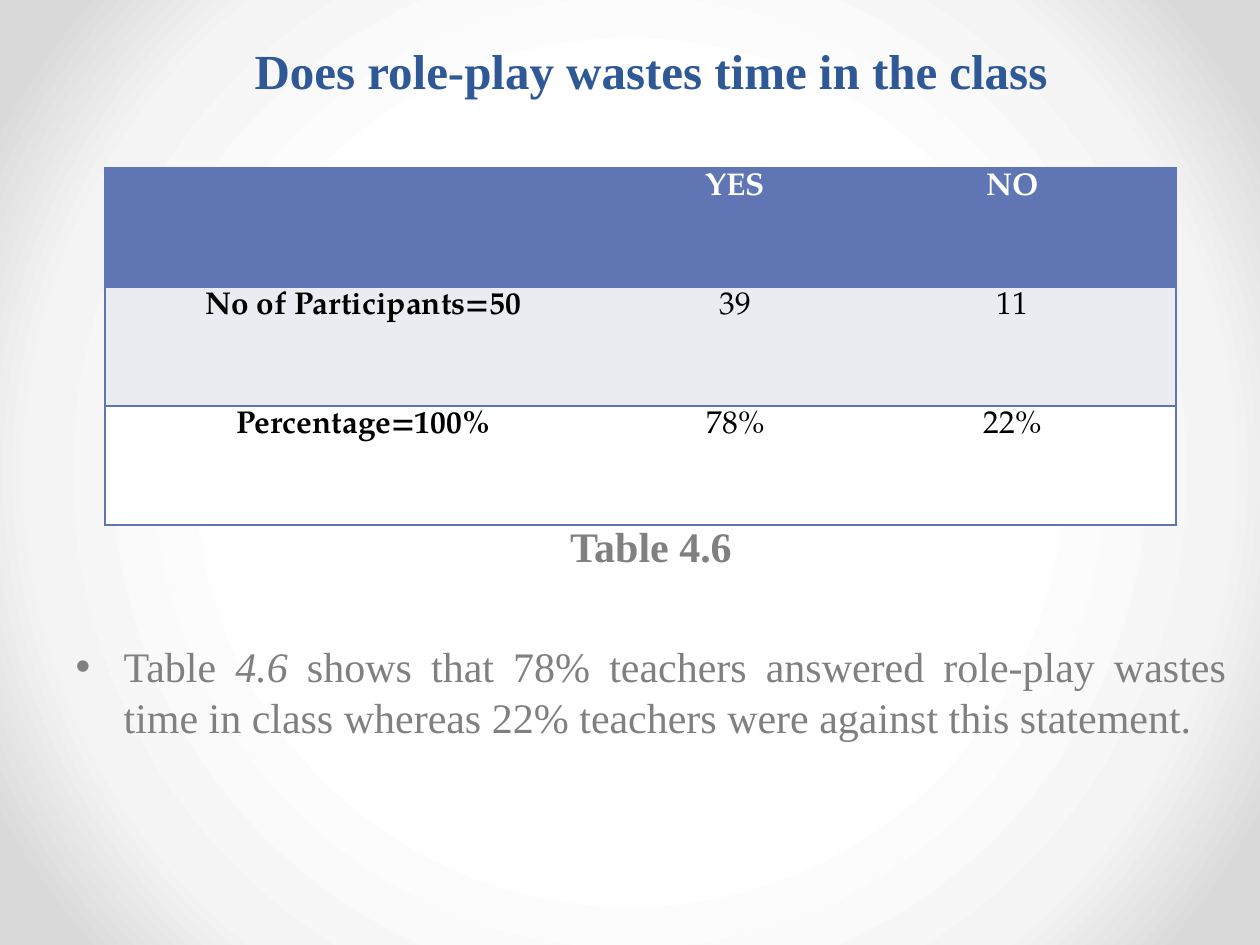
from pptx import Presentation
from pptx.util import Inches, Pt
from pptx.dml.color import RGBColor
from pptx.enum.text import PP_ALIGN, MSO_ANCHOR, MSO_AUTO_SIZE
from pptx.oxml import parse_xml
from pptx.oxml.ns import qn

TITLE = "Does role-play wastes time in the class"
ROWS = [
    ("", "YES", "NO"),
    ("No of Participants=50", "39", "11"),
    ("Percentage=100%", "78%", "22%"),
]
CAPTION = "Table 4.6"
POINT = [
    ("Table ", False),
    ("4.6", True),
    (" shows that 78% teachers answered role-play wastes time in class "
     "whereas 22% teachers were against this statement.", False),
]
STOPS = [(50, "FFFFFF"), (76, "F4F4F4"), (92, "DADADA")]
FILLS = ["6076B4", "EAECF2", "FFFFFF"]
COLS = [517, 227, 327]
ROW = 119
LINE = "6076B4"
GREY = "808080"
SERIF, TABLE = "Times New Roman", "TeX Gyre Pagella"
NS = 'xmlns:a="http://schemas.openxmlformats.org/drawingml/2006/main"'


def px(n):
    return Inches(n / 126)


def place(shape, x, y, w, h):
    shape.left, shape.top, shape.width, shape.height = map(px, (x, y, w, h))


def style(run, size, color, font=SERIF, bold=False, italic=False):
    face = run.font
    face.size, face.name = Pt(size), font
    face.bold, face.italic = bold, italic
    face.color.rgb = RGBColor.from_string(color)


def border(cell, sides):
    """Draw the given sides (of L, R, T, B) and clear the others."""
    props = cell._tc.get_or_add_tcPr()
    for i, side in enumerate("LRTB"):
        fill = (f'<a:solidFill><a:srgbClr val="{LINE}"/></a:solidFill>'
                if side in sides else "<a:noFill/>")
        props.insert(i, parse_xml(f'<a:ln{side} {NS} w="12700">{fill}</a:ln{side}>'))


def backdrop(slide):
    slide.background.fill.gradient()
    old = next(slide._element.iter(qn("a:gradFill")))
    stops = "".join(
        f'<a:gs pos="{pos * 1000}"><a:srgbClr val="{color}"/></a:gs>'
        for pos, color in STOPS)
    old.getparent().replace(old, parse_xml(
        f'<a:gradFill {NS} rotWithShape="1"><a:gsLst>{stops}</a:gsLst>'
        '<a:path path="circle"><a:fillToRect l="50000" t="50000" '
        'r="50000" b="50000"/></a:path></a:gradFill>'))


def add_title(slide):
    title = slide.shapes.title
    place(title, 63, 32, 1176, 76)
    frame = title.text_frame
    frame.text = TITLE
    frame.vertical_anchor = MSO_ANCHOR.MIDDLE
    para = frame.paragraphs[0]
    para.alignment = PP_ALIGN.CENTER
    style(para.runs[0], 28, "2F5897", bold=True)


def add_body(slide):
    body = slide.placeholders[1]
    place(body, 63, 514, 1176, 409)
    frame = body.text_frame
    frame.auto_size = MSO_AUTO_SIZE.NONE
    frame.text = CAPTION
    head, point = frame.paragraphs[0], frame.add_paragraph()
    head.alignment, head.space_before = PP_ALIGN.CENTER, Pt(0)
    props = head._p.get_or_add_pPr()
    props.set("marL", "0")
    props.set("indent", "0")
    props.append(parse_xml(f"<a:buNone {NS}/>"))
    style(head.runs[0], 24, GREY, bold=True)

    point.alignment, point.space_before = PP_ALIGN.JUSTIFY, Pt(40)
    props = point._p.get_or_add_pPr()
    props.set("marL", str(px(48)))
    props.set("indent", str(-px(48)))
    props.append(parse_xml(f'<a:buFont {NS} typeface="Arial"/>'))
    props.append(parse_xml(f'<a:buChar {NS} char="•"/>'))
    for text, italic in POINT:
        run = point.add_run()
        run.text = text
        style(run, 24, GREY, italic=italic)


def add_grid(slide):
    count = len(ROWS)
    grid = slide.shapes.add_table(
        count, len(COLS), px(105), px(168), px(sum(COLS)), px(ROW * count)).table
    for col, width in zip(grid.columns, COLS):
        col.width = px(width)
    for r, row in enumerate(ROWS):
        grid.rows[r].height = px(ROW)
        for c, text in enumerate(row):
            cell = grid.cell(r, c)
            cell.fill.solid()
            cell.fill.fore_color.rgb = RGBColor.from_string(FILLS[r])
            border(cell, "TB" + {0: "L", len(COLS) - 1: "R"}.get(c, ""))
            cell.margin_left = cell.margin_right = px(9)
            cell.margin_top = cell.margin_bottom = 0
            if text:
                cell.text = text
                para = cell.text_frame.paragraphs[0]
                para.alignment, para.line_spacing = PP_ALIGN.CENTER, 1.15
                style(para.runs[0], 18, "000000" if r else "FFFFFF",
                      TABLE, bold=r == 0 or c == 0)


def main():
    deck = Presentation()
    deck.slide_width, deck.slide_height = px(1260), px(945)
    slide = deck.slides.add_slide(deck.slide_layouts[1])
    backdrop(slide)
    add_title(slide)
    add_body(slide)
    add_grid(slide)
    deck.save("out.pptx")


if __name__ == "__main__":
    main()
